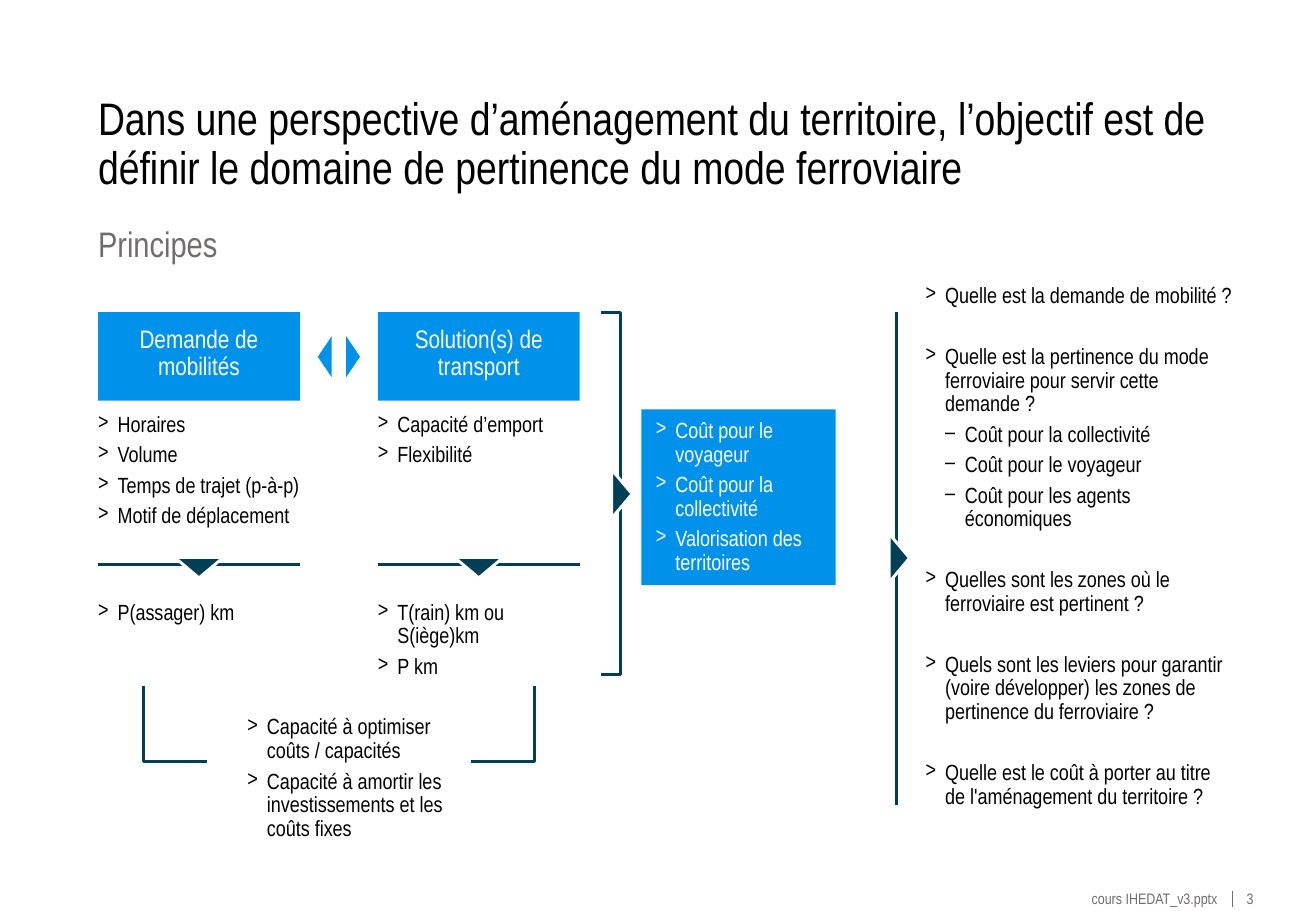
"""Build the slide on the relevance of rail transport in regional planning."""
from dataclasses import dataclass

from lxml import etree
from pptx import Presentation
from pptx.dml.color import RGBColor
from pptx.enum.shapes import MSO_CONNECTOR, MSO_SHAPE
from pptx.enum.text import MSO_ANCHOR, PP_ALIGN
from pptx.oxml.ns import qn
from pptx.util import Cm, Pt

RECTANGLE, TRIANGLE = MSO_SHAPE.RECTANGLE, MSO_SHAPE.ISOSCELES_TRIANGLE
STRAIGHT = MSO_CONNECTOR.STRAIGHT
TOP, MIDDLE = MSO_ANCHOR.TOP, MSO_ANCHOR.MIDDLE
LEFT, CENTER, RIGHT = PP_ALIGN.LEFT, PP_ALIGN.CENTER, PP_ALIGN.RIGHT

BLACK = RGBColor(0x00, 0x00, 0x00)
WHITE = RGBColor(0xFF, 0xFF, 0xFF)
GREY = RGBColor(0x71, 0x6D, 0x6D)
BLUE = RGBColor(0x00, 0x91, 0xEA)
PETROL = RGBColor(0x00, 0x3F, 0x56)

FONT = "Arial Narrow"
LINE_WIDTH = 1.75
ITEM_GAP = 4
SECTION_GAP = 22
INDENT = 0.41
MARGIN = 2.05
COLUMN_PITCH = 5.85
COLUMN_WIDTH = 4.22
DIAGRAM_TOP = 6.53


@dataclass
class Item:
    text: str
    bullet: str = ">"
    level: int = 0
    gap: float = ITEM_GAP


@dataclass
class Box:
    left: float
    top: float
    width: float
    height: float
    items: list[Item]
    size: float = 13
    color: RGBColor = BLACK
    fill: RGBColor | None = None
    align: PP_ALIGN = LEFT
    anchor: MSO_ANCHOR = TOP
    insets: tuple[float, float, float, float] = (0, 0, 0, 0)
    wrap: bool = True


@dataclass
class Arrow:
    center_x: float
    center_y: float
    rotation: float
    width: float = 1.02
    height: float = 0.43
    fill: RGBColor = PETROL
    outline: RGBColor | None = WHITE


@dataclass
class Column:
    heading: str
    features: list[str]
    units: list[str]


def bullets(*texts: str) -> list[Item]:
    return [Item(text) for text in texts]


def plain(text: str) -> list[Item]:
    return [Item(text, bullet="")]


def add_bullet(paragraph, item: Item) -> None:
    properties = paragraph._p.get_or_add_pPr()
    properties.set("marL", str(Cm(INDENT * (item.level + 1))))
    properties.set("indent", str(-Cm(INDENT)))
    etree.SubElement(properties, qn("a:buFont")).set("typeface", FONT)
    etree.SubElement(properties, qn("a:buChar")).set("char", item.bullet)


def draw_box(slide, box: Box) -> None:
    frame = [Cm(value) for value in (box.left, box.top, box.width, box.height)]
    if box.fill is None:
        shape = slide.shapes.add_textbox(*frame)
    else:
        shape = slide.shapes.add_shape(RECTANGLE, *frame)
        shape.shadow.inherit = False
        shape.fill.solid()
        shape.fill.fore_color.rgb = box.fill
        shape.line.fill.background()
    text_frame = shape.text_frame
    text_frame.word_wrap = box.wrap
    text_frame.vertical_anchor = box.anchor
    (text_frame.margin_left, text_frame.margin_top,
     text_frame.margin_right, text_frame.margin_bottom) = map(Cm, box.insets)
    text_frame.text = "\n".join(item.text for item in box.items)
    for index, (paragraph, item) in enumerate(zip(text_frame.paragraphs, box.items)):
        if item.bullet:
            add_bullet(paragraph, item)
        paragraph.level = item.level
        paragraph.alignment = box.align
        paragraph.line_spacing = 0.9
        paragraph.space_before = Pt(item.gap if index else 0)
        for run in paragraph.runs:
            run.font.name = FONT
            run.font.size = Pt(box.size)
            run.font.color.rgb = box.color


def draw_line(slide, start: tuple[float, float], end: tuple[float, float],
              color: RGBColor = PETROL, width: float = LINE_WIDTH) -> None:
    connector = slide.shapes.add_connector(STRAIGHT, *map(Cm, start + end))
    connector.line.color.rgb = color
    connector.line.width = Pt(width)
    etree.SubElement(connector._element.spPr, qn("a:effectLst"))


def draw_bracket(slide, points: list[tuple[float, float]]) -> None:
    start, *others = [(Cm(x), Cm(y)) for x, y in points]
    builder = slide.shapes.build_freeform(*start)
    builder.add_line_segments(others, close=False)
    shape = builder.convert_to_shape()
    shape.shadow.inherit = False
    shape.fill.background()
    shape.line.color.rgb = PETROL
    shape.line.width = Pt(LINE_WIDTH)


def draw_arrow(slide, arrow: Arrow) -> None:
    shape = slide.shapes.add_shape(
        TRIANGLE, Cm(arrow.center_x - arrow.width / 2), Cm(arrow.center_y - arrow.height / 2),
        Cm(arrow.width), Cm(arrow.height))
    shape.rotation = arrow.rotation
    shape.shadow.inherit = False
    shape.fill.solid()
    shape.fill.fore_color.rgb = arrow.fill
    if arrow.outline is None:
        shape.line.fill.background()
    else:
        shape.line.color.rgb = arrow.outline
        shape.line.width = Pt(LINE_WIDTH)


def draw_column(slide, column: Column, left: float) -> None:
    draw_box(slide, Box(left, DIAGRAM_TOP, COLUMN_WIDTH, 1.85, plain(column.heading), 15, WHITE,
                        BLUE, CENTER, MIDDLE, (0.2, 0.2, 0.2, 0.3)))
    draw_box(slide, Box(left, 8.64, COLUMN_WIDTH, 2.44, bullets(*column.features)))
    draw_line(slide, (left, 11.81), (left + COLUMN_WIDTH, 11.81))
    draw_arrow(slide, Arrow(left + COLUMN_WIDTH / 2, 11.87, 180))
    draw_box(slide, Box(left, 12.57, COLUMN_WIDTH, 1.65, bullets(*column.units)))


COLUMNS = [
    Column("Demande de mobilités",
           ["Horaires", "Volume", "Temps de trajet (p-à-p)", "Motif de déplacement"],
           ["P(assager) km"]),
    Column("Solution(s) de transport", ["Capacité d’emport", "Flexibilité"],
           ["T(rain) km ou S(iège)km", "P km"]),
]
COSTS = bullets("Coût pour le voyageur", "Coût pour la collectivité", "Valorisation des territoires")
CAPACITIES = bullets("Capacité à optimiser coûts / capacités",
                     "Capacité à amortir les investissements et les coûts fixes")
QUESTIONS = [
    Item("Quelle est la demande de mobilité ?"),
    Item("Quelle est la pertinence du mode ferroviaire pour servir cette demande ?", gap=SECTION_GAP),
    Item("Coût pour la collectivité", "–", 1),
    Item("Coût pour le voyageur", "–", 1),
    Item("Coût pour les agents économiques", "–", 1),
    Item("Quelles sont les zones où le ferroviaire est pertinent ?", gap=SECTION_GAP),
    Item("Quels sont les leviers pour garantir (voire développer) les zones de pertinence "
         "du ferroviaire ?", gap=SECTION_GAP),
    Item("Quelle est le coût à porter au titre de l'aménagement du territoire ?", gap=SECTION_GAP),
]
TITLE = ("Dans une perspective d’aménagement du territoire, l’objectif est de définir "
         "le domaine de pertinence du mode ferroviaire")
BOXES = [
    Box(MARGIN, 2.01, 23.72, 2.08, plain(TITLE), 27),
    Box(MARGIN, 4.75, 23.72, 0.84, plain("Principes"), 21, GREY),
    Box(13.41, 8.56, 4.06, 3.68, COSTS, 13, WHITE, BLUE, LEFT, MIDDLE, (0.3, 0.2, 0.3, 0.2)),
    Box(5.17, 14.96, 4.34, 2.64, CAPACITIES, anchor=MIDDLE),
    Box(19.35, 5.95, 6.42, 11.1, QUESTIONS),
    Box(22.76, 18.64, 2.69, 0.36, plain("cours IHEDAT_v3.pptx"), 9, GREY, align=RIGHT, wrap=False),
    Box(26.06, 18.64, 0.33, 0.36, plain("3"), 9, GREY, wrap=False),
]
BRACKETS = [
    [(3, 14.35), (3, 15.93), (4.32, 15.93)],
    [(11.17, 14.35), (11.17, 15.93), (9.85, 15.93)],
    [(12.57, DIAGRAM_TOP), (12.98, DIAGRAM_TOP), (12.98, 14.1), (12.57, 14.1)],
]
ARROWS = [
    Arrow(6.79, 7.46, 270, 0.86, 0.29, BLUE, None),
    Arrow(7.38, 7.46, 90, 0.86, 0.29, BLUE, None),
    Arrow(13, 10.33, 90),
    Arrow(18.8, 11.67, 90),
]


def main() -> None:
    presentation = Presentation()
    presentation.slide_width, presentation.slide_height = Cm(27.51), Cm(19.05)
    slide = presentation.slides.add_slide(presentation.slide_layouts[6])
    for index, column in enumerate(COLUMNS):
        draw_column(slide, column, MARGIN + index * COLUMN_PITCH)
    for points in BRACKETS:
        draw_bracket(slide, points)
    draw_line(slide, (18.75, DIAGRAM_TOP), (18.75, 16.84))
    draw_line(slide, (25.76, 18.64), (25.76, 18.97), GREY, 0.75)
    for arrow in ARROWS:
        draw_arrow(slide, arrow)
    for box in BOXES:
        draw_box(slide, box)
    presentation.save("out.pptx")


if __name__ == "__main__":
    main()
